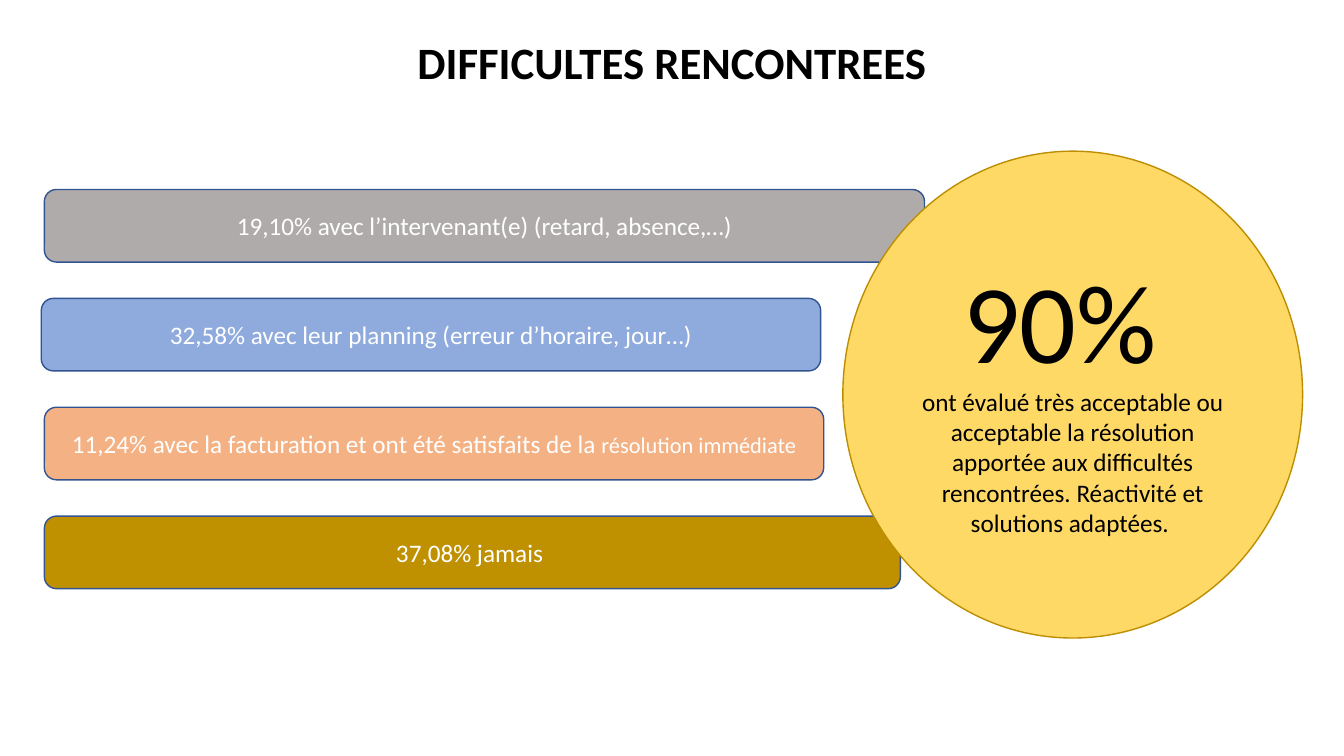
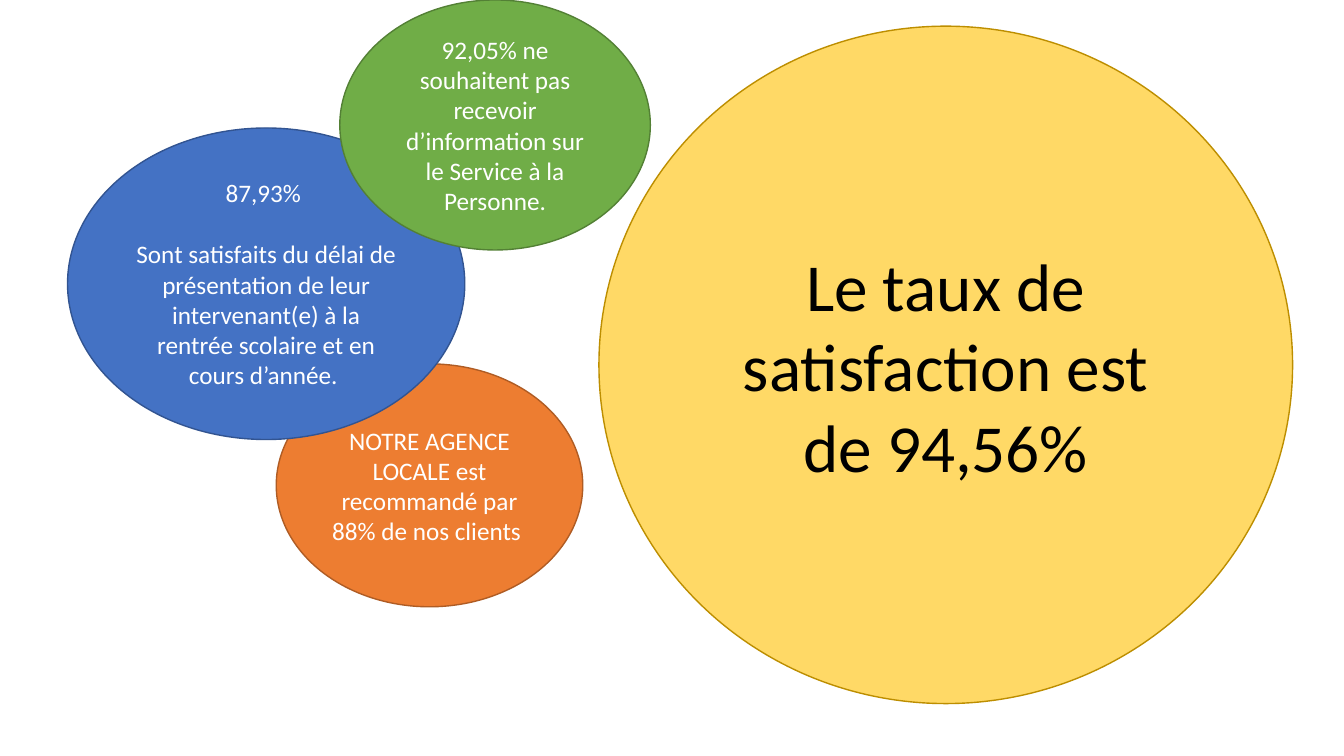
from pptx import Presentation
from pptx.dml.color import RGBColor
from pptx.enum.shapes import MSO_SHAPE
from pptx.enum.text import MSO_ANCHOR, PP_ALIGN
from pptx.util import Inches, Pt

OVAL, ROUND = MSO_SHAPE.OVAL, MSO_SHAPE.ROUNDED_RECTANGLE
CENTER, MIDDLE = PP_ALIGN.CENTER, MSO_ANCHOR.MIDDLE
TITLE_ONLY, BLANK = 5, 6

# Shared style
FONT = "Calibri"
BLACK, WHITE = "000000", "FFFFFF"
NAVY, GOLD, YELLOW = "325491", "BD8E00", "FFD966"

# Content: a paragraph is a list of (text, size) runs
TITLE = "DIFFICULTES RENCONTREES"
BARS = [  # left, width, fill, runs
    (0.44, 8.73, "AFABAB",
     [("19,10% avec l’intervenant(e) (retard, absence,…)", 18)]),
    (0.41, 7.73, "8FAADC",
     [("32,58% avec leur planning (erreur d’horaire, jour…)", 18)]),
    (0.44, 7.73, "F4B183",
     [("11,24% avec la facturation et ont été satisfaits de la ", 18),
      ("résolution immédiate", 16)]),
    (0.44, 8.49, "BF9000", [("37,08% jamais ", 18)]),
]
BAR_TOP, BAR_STEP, BAR_HIGH = 1.88, 1.08, 0.72
RESULT = [
    [("90% ", 80)],
    [("ont évalué très acceptable ou acceptable la résolution apportée aux "
      "difficultés rencontrées. Réactivité et solutions adaptées. ", 18)],
]
BUBBLES = [  # box, fill, line, text colour, paragraphs, gap after each
    ((2.74, 3.61, 3.04, 2.41), "ED7D31", "AF5C24", WHITE,
     [[("NOTRE AGENCE LOCALE est recommandé par 88% de nos clients ", 18)]],
     0),
    ((0.67, 1.27, 3.94, 3.09), "4472C4", NAVY, WHITE,
     [[("87,93% ", 18)],
      [("Sont satisfaits du délai de présentation de leur intervenant(e) "
        "à la rentrée scolaire et en cours d’année. ", 18)]], 22),
    ((3.37, 0, 3.08, 2.48), "70AD47", "538035", WHITE,
     [[("92,05% ne souhaitent pas recevoir d’information sur le Service "
        "à la Personne.", 18)]], 0),
    ((5.94, 0.26, 6.88, 6.72), YELLOW, GOLD, BLACK,
     [[("Le taux de satisfaction est de 94,56%", 48)]], 0),
]


def rgb(code):
    return RGBColor.from_string(code)


def place(item, box):
    item.left, item.top, item.width, item.height = map(Inches, box)


def write(frame, paras, color=WHITE, bold=False, gap=0):
    frame.word_wrap = True
    frame.vertical_anchor = MIDDLE
    for i, runs in enumerate(paras):
        para = frame.add_paragraph() if i else frame.paragraphs[0]
        para.alignment = CENTER
        if i < len(paras) - 1:
            para.space_after = Pt(gap)
        for text, size in runs:
            run = para.add_run()
            run.text = text
            run.font.name, run.font.size = FONT, Pt(size)
            run.font.bold = bold
            run.font.color.rgb = rgb(color)


def draw(slide, kind, box, fill, line, paras, **style):
    shape = slide.shapes.add_shape(kind, *map(Inches, box))
    shape.shadow.inherit = False
    shape.fill.solid()
    shape.fill.fore_color.rgb = rgb(fill)
    shape.line.color.rgb = rgb(line)
    shape.line.width = Pt(1)
    write(shape.text_frame, paras, **style)


def main():
    deck = Presentation()
    deck.slide_width, deck.slide_height = Inches(13.33), Inches(7.5)

    # Difficulties: stacked bars and the result circle
    slide = deck.slides.add_slide(deck.slide_layouts[TITLE_ONLY])
    title = slide.shapes.title
    place(title, (0.09, 0.29, 13.15, 0.64))
    write(title.text_frame, [[(TITLE, 32)]], color=BLACK, bold=True)
    for row, (left, width, fill, runs) in enumerate(BARS):
        box = (left, BAR_TOP + row * BAR_STEP, width, BAR_HIGH)
        draw(slide, ROUND, box, fill, NAVY, [runs])
    draw(slide, OVAL, (8.36, 1.5, 4.56, 4.83), YELLOW, GOLD, RESULT,
         color=BLACK)

    # Satisfaction: overlapping bubbles
    slide = deck.slides.add_slide(deck.slide_layouts[BLANK])
    for box, fill, line, color, paras, gap in BUBBLES:
        draw(slide, OVAL, box, fill, line, paras, color=color, gap=gap)

    deck.save("out.pptx")


if __name__ == "__main__":
    main()
